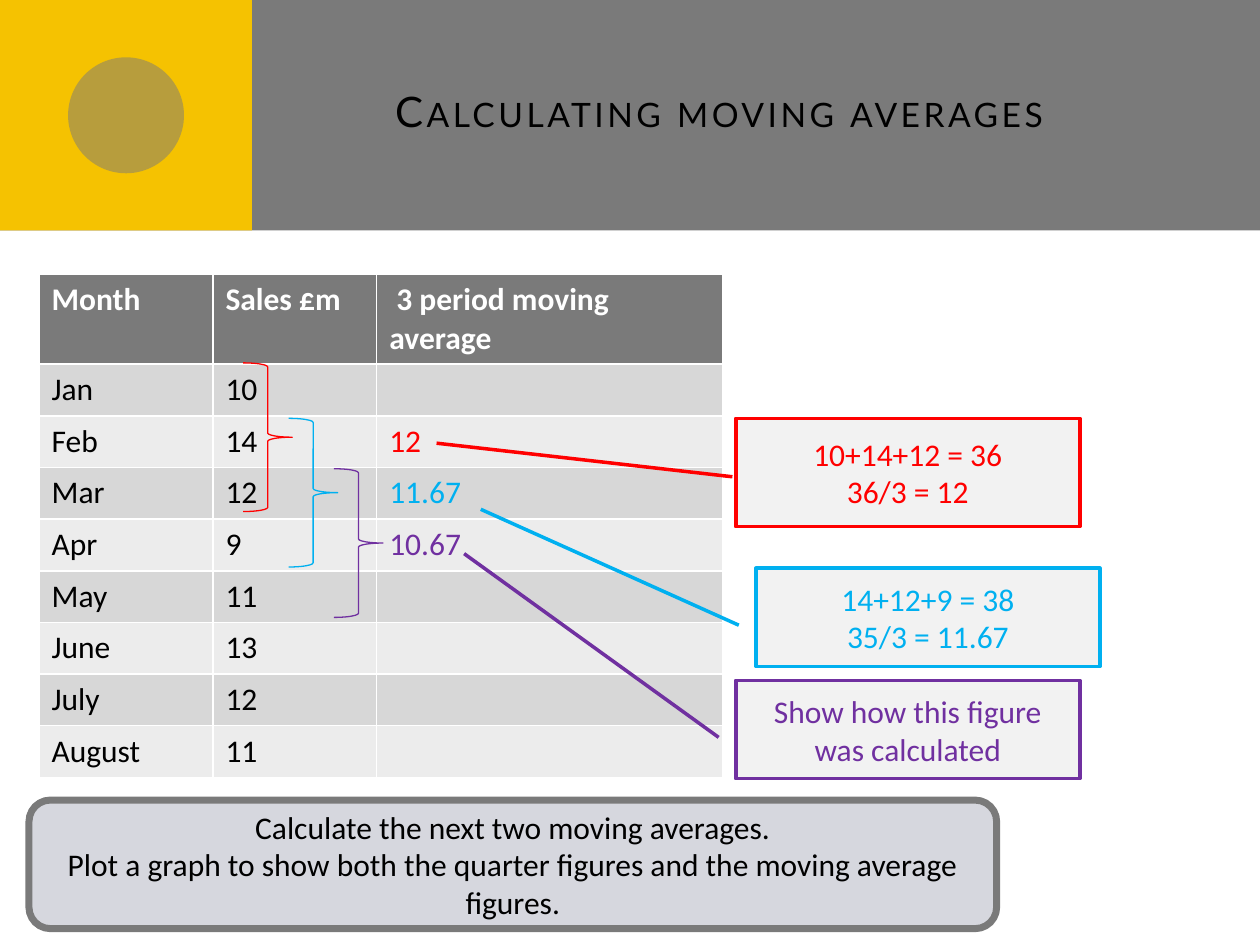
from lxml.etree import SubElement
from pptx import Presentation
from pptx.dml.color import RGBColor
from pptx.enum.shapes import MSO_SHAPE as SHAPE
from pptx.enum.text import MSO_ANCHOR as ANCHOR, PP_ALIGN as ALIGN
from pptx.oxml.ns import qn
from pptx.util import Inches, Pt

W, H = 10, 7.5
GREY, YELLOW, WHITE, BLACK = "7A7A7A", "F5C201", "FFFFFF", "000000"
RED, BLUE, PURPLE = "FF0000", "00B0F0", "7030A0"
PALE, BANDS = "F2F2F2", ("D7D7D7", "ECECEC")
BAND_H = 1.83
ROW_H = 0.41
COLUMNS = (1.38, 1.3, 2.75)
HEADER = ("Month", "Sales £m", " 3 period moving average")
SALES = (("Jan", 10), ("Feb", 14), ("Mar", 12), ("Apr", 9),
         ("May", 11), ("June", 13), ("July", 12), ("August", 11))
AVERAGES = {"Feb": ("12", RED), "Mar": ("11.67", BLUE), "Apr": ("10.67", PURPLE)}
CALLOUTS = (
    (RED, 5.84, 3.32, 0.86, ("10+14+12 = 36", "36/3 = 12"),
     (0.54, -0.01, 0.23, -0.87)),
    (BLUE, 6, 4.51, 0.78, ("14+12+9 = 38", "35/3 = 11.67"),
     (0.58, -0.05, -0.6, -0.8)),
    (PURPLE, 5.84, 5.4, 0.78, ("Show how this figure was calculated",),
     (0.58, -0.05, -1.29, -0.79)),
)
TASK = ("Calculate the next two moving averages.",
        "Plot a graph to show both the quarter figures and the moving average figures.")
BRACES = ((RED, 2.88), (BLUE, 3.32), (PURPLE, 3.72))


def rgb(code):
    """Turn a hex string into a colour."""
    return RGBColor.from_string(code)


def add_run(p, text, color, size=18, font="Calibri", bold=False):
    """Add one formatted run to a paragraph."""
    r = p.add_run()
    r.text = text
    r.font.name, r.font.size, r.font.bold = font, Pt(size), bold
    r.font.color.rgb = rgb(color)
    return r


def add_box(s, kind, box, fill=None, line=None, weight=1):
    """Add a preset shape with its fill and outline."""
    sp = s.shapes.add_shape(kind, *map(Inches, box))
    sp.shadow.inherit = False
    if fill:
        sp.fill.solid()
        sp.fill.fore_color.rgb = rgb(fill)
    else:
        sp.fill.background()
    if line:
        sp.line.color.rgb = rgb(line)
        sp.line.width = Pt(weight)
    else:
        sp.line.fill.background()
    return sp


def write_lines(sp, lines, color):
    """Write centred paragraphs in the middle of a shape."""
    tf = sp.text_frame
    tf.word_wrap = True
    tf.vertical_anchor = ANCHOR.MIDDLE
    for i, text in enumerate(lines):
        p = tf.add_paragraph() if i else tf.paragraphs[0]
        p.alignment = ALIGN.CENTER
        add_run(p, text, color)


def add_banner(s):
    """Draw the title band with its yellow square and see-through disc."""
    side, disc = W / 5, 0.92
    add_box(s, SHAPE.RECTANGLE, (0, 0, W, BAND_H), GREY)
    add_box(s, SHAPE.RECTANGLE, (0, 0, side, BAND_H), YELLOW)
    sp = add_box(s, SHAPE.OVAL,
                 ((side - disc) / 2, (BAND_H - disc) / 2, disc, disc), GREY)
    color = sp.fill._xPr.find(qn("a:solidFill"))[0]
    SubElement(color, qn("a:alpha"), val="50000")


def set_title(s, text):
    """Place the title placeholder over the banner in spaced small capitals."""
    sp = s.shapes.title
    sp.left, sp.top, sp.width, sp.height = map(Inches, (2.67, 0.25, 6.83, 1.25))
    sp.element.getparent().append(sp.element)
    tf = sp.text_frame
    tf.word_wrap = True
    tf.vertical_anchor = ANCHOR.MIDDLE
    p = tf.paragraphs[0]
    p.alignment = ALIGN.CENTER
    r = add_run(p, text, BLACK, 24, "Lato")
    r.font._element.set("cap", "small")
    r.font._element.set("spc", "200")


def fill_cell(cell, text, fill, color, bold=False):
    """Fill a table cell and write its text."""
    cell.fill.solid()
    cell.fill.fore_color.rgb = rgb(fill)
    p = cell.text_frame.paragraphs[0]
    p.font.size = Pt(18)
    if text:
        add_run(p, text, color, bold=bold)


def add_sales_table(s):
    """Add the table of monthly sales and moving averages."""
    rows = len(SALES) + 1
    box = (0.31, 2.18, sum(COLUMNS), ROW_H * rows)
    table = s.shapes.add_table(rows, len(COLUMNS), *map(Inches, box)).table
    for column, width in zip(table.columns, COLUMNS):
        column.width = Inches(width)
    for j, text in enumerate(HEADER):
        fill_cell(table.cell(0, j), text, GREY, WHITE, True)
    for i, (month, sales) in enumerate(SALES):
        entries = ((month, BLACK), (str(sales), BLACK),
                   AVERAGES.get(month, ("", BLACK)))
        for j, (text, color) in enumerate(entries):
            fill_cell(table.cell(i + 1, j), text, BANDS[i % 2], color)


def add_callout(s, color, left, top, height, lines, pointer):
    """Add a working-out box whose pointer reaches its average."""
    sp = add_box(s, SHAPE.LINE_CALLOUT_1, (left, top, 2.73, height), PALE, color, 2)
    for i, value in enumerate(pointer):
        sp.adjustments[i] = value
    write_lines(sp, lines, color)


def main():
    """Build the slide and save it."""
    prs = Presentation()
    prs.slide_width, prs.slide_height = Inches(W), Inches(H)
    s = prs.slides.add_slide(prs.slide_layouts[5])
    add_banner(s)
    set_title(s, "Calculating moving averages")
    add_sales_table(s)
    for callout in CALLOUTS:
        add_callout(s, *callout)
    task = add_box(s, SHAPE.ROUNDED_RECTANGLE, (0.23, 6.35, 7.68, 1.02),
                   "D6D7DE", GREY, 4)
    write_lines(task, TASK, BLACK)
    for i, (color, top) in enumerate(BRACES):
        add_box(s, SHAPE.RIGHT_BRACE, (1.93 + 0.36 * i, top, 0.39, 1.18),
                line=color, weight=0.75)
    prs.save("out.pptx")


if __name__ == "__main__":
    main()
